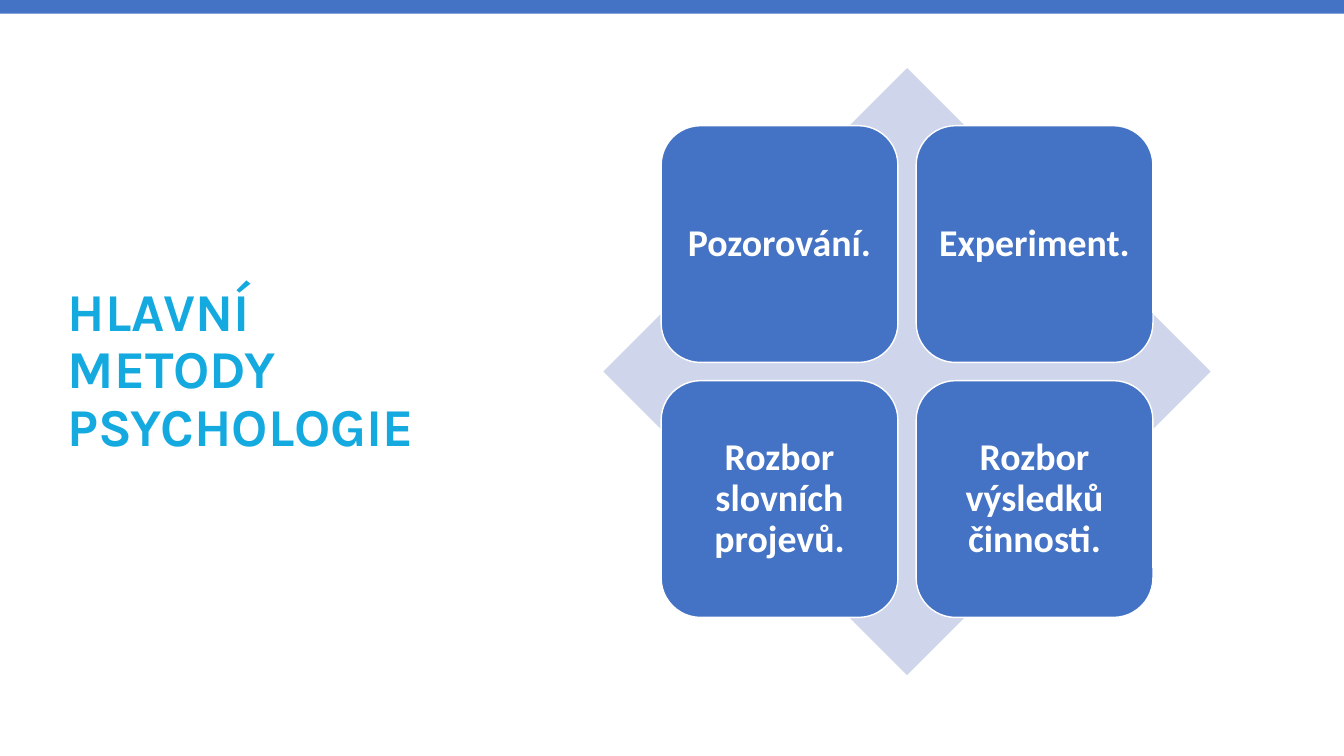
from pptx import Presentation, util as u
from pptx.dml.color import RGBColor
from pptx.enum import shapes, text

W, H = 13.33, 7.5
BLUE, PALE, CYAN, WHITE = "4472C4", "CFD5EA", "14AAE0", "FFFFFF"
TOP, SIDE = 0.09 * H, 0.803 * H
DIAMOND_LEFT = 0.449 * W
TILE, PITCH = 0.39 * SIDE, 0.42 * SIDE
GRID_INSET = (SIDE - TILE - PITCH) / 2
METHODS = [
    ["Pozorování.", "Experiment."],
    ["Rozbor slovních projevů.", "Rozbor výsledků činnosti."],
]


def color(value):
    return RGBColor.from_string(value)


def add_block(s, kind, box, fill, line=None):
    sp = s.shapes.add_shape(kind, *map(u.Inches, box))
    sp.shadow.inherit = False
    sp.fill.solid()
    sp.fill.fore_color.rgb = color(fill)
    if line:
        sp.line.color.rgb = color(line)
        sp.line.width = u.Pt(1)
    else:
        sp.line.fill.background()
    return sp


def write(sp, words, font, size, ink, align, margins):
    tf = sp.text_frame
    tf.word_wrap = True
    tf.vertical_anchor = text.MSO_ANCHOR.MIDDLE
    tf.margin_left, tf.margin_right = map(u.Inches, margins)
    p = tf.paragraphs[0]
    p.text = words
    p.alignment = align
    p.line_spacing = 0.9
    p.font.name = font
    p.font.size = u.Pt(size)
    p.font.bold = True
    p.font.color.rgb = color(ink)


def add_title(s, words):
    sp = s.shapes.add_textbox(*map(u.Inches, (0.043 * W, TOP, 0.312 * W, SIDE)))
    write(sp, words, "Karla", 38, CYAN, text.PP_ALIGN.LEFT, (0.1, 0.4))


def add_tile(s, row, col, words):
    left = DIAMOND_LEFT + GRID_INSET + col * PITCH
    top = TOP + GRID_INSET + row * PITCH
    sp = add_block(s, shapes.MSO_SHAPE.ROUNDED_RECTANGLE,
                   (left, top, TILE, TILE), BLUE, WHITE)
    write(sp, words, "Calibri", 27, WHITE, text.PP_ALIGN.CENTER, (0.1, 0.1))


def main():
    prs = Presentation()
    prs.slide_width, prs.slide_height = u.Inches(W), u.Inches(H)
    s = prs.slides.add_slide(prs.slide_layouts[6])
    add_title(s, "HLAVNÍ METODY PSYCHOLOGIE")
    add_block(s, shapes.MSO_SHAPE.RECTANGLE, (0, 0, W, 0.018 * H), BLUE)
    add_block(s, shapes.MSO_SHAPE.DIAMOND, (DIAMOND_LEFT, TOP, SIDE, SIDE), PALE)
    for row, methods in enumerate(METHODS):
        for col, words in enumerate(methods):
            add_tile(s, row, col, words)
    prs.save("out.pptx")


if __name__ == "__main__":
    main()
